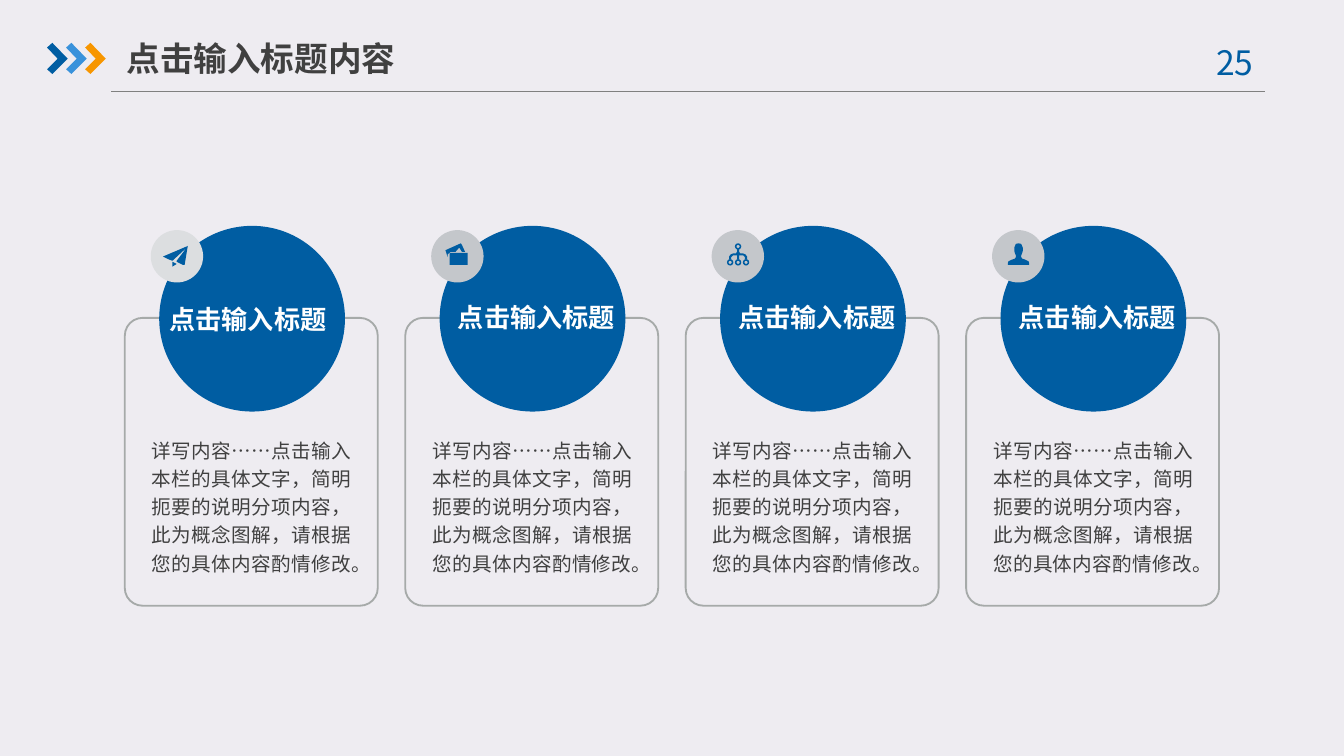
from lxml import etree
from pptx import Presentation
from pptx.dml.color import RGBColor
from pptx.enum.shapes import MSO_CONNECTOR, MSO_SHAPE
from pptx.enum.text import MSO_ANCHOR, PP_ALIGN
from pptx.oxml.ns import qn
from pptx.util import Cm, Pt

STRAIGHT = MSO_CONNECTOR.STRAIGHT
OVAL, DONUT = MSO_SHAPE.OVAL, MSO_SHAPE.DONUT
ROUNDED, RECT = MSO_SHAPE.ROUNDED_RECTANGLE, MSO_SHAPE.RECTANGLE
LEFT, CENTER, JUSTIFY = PP_ALIGN.LEFT, PP_ALIGN.CENTER, PP_ALIGN.JUSTIFY
TOP, MIDDLE = MSO_ANCHOR.TOP, MSO_ANCHOR.MIDDLE

FONT = "Noto Sans CJK SC"
BLUE, SKY, ORANGE = "005DA2", "3992DB", "F79600"
DARK, WHITE = "404040", "FFFFFF"
CARD_LEFT, CARD_PITCH = 2.36, 5.3
TITLE = "点击输入标题"
BODY = ("详写内容……点击输入本栏的具体文字，简明扼要的说明分项内容，"
        "此为概念图解，请根据您的具体内容酌情修改。")

CHEVRON = [(0, 9), (10, 0), (39, 30), (10, 59), (0, 50), (20, 30)]
PLANE_WINGS = [(70, 30), (23, 50), (33, 55), (41, 58), (68, 33), (49, 58),
               (49, 60), (61, 66), (64, 66)]
PLANE_FOLD = [(41, 60), (49, 64), (41, 69)]
BACK_PHOTO = [(64, 41), (58, 28), (56, 25), (27, 38), (31, 51), (31, 46),
              (37, 41), (46, 41), (53, 33), (58, 41)]
HALF_TREE = [(52, 36), (52, 41), (54, 44), (59, 44), (64, 46), (67, 50),
             (67, 56), (63, 56), (63, 51), (60, 48), (52, 48), (52, 56)]
HALF_PERSON = [(50, 25), (55, 26), (58, 33), (58, 39), (57, 43), (55, 48),
               (55, 51), (57, 54), (63, 56), (69, 59), (70, 62), (70, 66)]
TREE_NODES = [(0.5, 0.31), (0.35, 0.61), (0.5, 0.61), (0.65, 0.61)]


def color(value):
    """Return the colour for a hex string."""
    return RGBColor.from_string(value)


def paint(s, fill=None, line=None):
    """Set the fill and outline of a shape and drop its shadow."""
    s.shadow.inherit = False
    if fill:
        s.fill.solid()
        s.fill.fore_color.rgb = color(fill)
    else:
        s.fill.background()
    if line:
        s.line.color.rgb = color(line)
        s.line.width = Pt(1)
    else:
        s.line.fill.background()


def add_preset(slide, kind, x, y, w, h, fill=None, line=None, adjust=None):
    """Add a preset shape."""
    s = slide.shapes.add_shape(kind, Cm(x), Cm(y), Cm(w), Cm(h))
    if adjust is not None:
        s.adjustments[0] = adjust
    paint(s, fill, line)


def add_outline(slide, x, y, points, fill):
    """Add a closed polygon given in hundredths of a centimetre."""
    builder = slide.shapes.build_freeform(*points[0], scale=Cm(0.01))
    builder.add_line_segments(points[1:], close=True)
    paint(builder.convert_to_shape(Cm(x), Cm(y)), fill)


def mirrored(half):
    """Complete a right half outline with its reflection about x = 50."""
    return half + [(100 - x, y) for x, y in reversed(half)]


def add_text(slide, x, y, w, h, text, size, fill, align=LEFT, anchor=MIDDLE,
             bold=False, spacing=None, inset=0):
    """Add a wrapped text box with one paragraph."""
    tf = slide.shapes.add_textbox(Cm(x), Cm(y), Cm(w), Cm(h)).text_frame
    tf.word_wrap = True
    tf.vertical_anchor = anchor
    tf.margin_left = tf.margin_right = 0
    tf.margin_top = tf.margin_bottom = Cm(inset)
    p = tf.paragraphs[0]
    p.text = text
    p.alignment = align
    if spacing:
        p.line_spacing = spacing
    p.font.size = Pt(size)
    p.font.bold = bold
    p.font.name = FONT
    p.font.color.rgb = color(fill)
    props = p._p.pPr.find(qn("a:defRPr"))
    etree.SubElement(props, qn("a:ea"), typeface=FONT)


def add_rule(slide, x1, x2, y):
    """Add the grey horizontal rule under the heading."""
    s = slide.shapes.add_connector(STRAIGHT, Cm(x1), Cm(y), Cm(x2), Cm(y))
    s.line.color.rgb = color("808080")
    s.line.width = Pt(0.75)
    etree.SubElement(s._element.spPr, qn("a:effectLst"))


def add_header(slide):
    """Add the rule, chevrons, page number and heading."""
    add_rule(slide, 2.1, 23.9, 1.73)
    for i, fill in enumerate((BLUE, SKY, ORANGE)):
        add_outline(slide, 0.89 + 0.36 * i, 0.81, CHEVRON, fill)
    add_text(slide, 22.41, 0.66, 1.85, 1.02, "25", 18, BLUE, CENTER, TOP,
             inset=0.13)
    add_text(slide, 2.39, 0.56, 5.92, 1.07, "点击输入标题内容", 18, DARK,
             bold=True, inset=0.13)


def draw_plane(slide, x, y):
    """Draw a paper plane."""
    for points in (PLANE_WINGS, PLANE_FOLD):
        add_outline(slide, x, y, points, BLUE)


def draw_photos(slide, x, y):
    """Draw two stacked photos."""
    add_outline(slide, x, y, BACK_PHOTO, BLUE)
    add_preset(slide, RECT, x + 0.35, y + 0.43, 0.34, 0.23, BLUE)


def draw_tree(slide, x, y):
    """Draw a branching tree with ring nodes."""
    add_outline(slide, x, y, mirrored(HALF_TREE), BLUE)
    for dx, dy in TREE_NODES:
        add_preset(slide, DONUT, x + dx - 0.06, y + dy - 0.06, 0.12, 0.12,
                   BLUE, adjust=0.25)


def draw_person(slide, x, y):
    """Draw the bust of a person."""
    add_outline(slide, x, y, mirrored(HALF_PERSON), BLUE)


def add_card(slide, x, draw_icon, badge, title_shift, title_spacing):
    """Add a framed card with a title disc, an icon badge and body text."""
    add_preset(slide, ROUNDED, x, 6.01, 4.78, 5.44, line="A6AAA9",
               adjust=0.07)
    add_preset(slide, OVAL, x + 0.65, 4.27, 3.51, 3.51, BLUE)
    add_preset(slide, OVAL, x + 0.49, 4.35, 0.99, 0.99, badge)
    draw_icon(slide, x + 0.49, 4.35)
    add_text(slide, x + title_shift, 5.44, 3.3, 1.19, TITLE, 14, WHITE,
             CENTER, bold=True, spacing=title_spacing)
    add_text(slide, x + 0.51, 8.36, 3.78, 2.36, BODY, 10.5, DARK, JUSTIFY,
             spacing=1.2)


def main():
    """Build and save the slide."""
    prs = Presentation()
    prs.slide_width, prs.slide_height = Cm(25.4), Cm(14.29)
    slide = prs.slides.add_slide(prs.slide_layouts[6])
    slide.background.fill.solid()
    slide.background.fill.fore_color.rgb = color("EEECF1")
    add_header(slide)
    cards = [
        (draw_plane, "DCDEE0", 0.68, 1.0),
        (draw_photos, "C4C7CB", 0.83, 0.9),
        (draw_tree, "C4C7CB", 0.83, 0.9),
        (draw_person, "C4C7CB", 0.83, 0.9),
    ]
    for i, card in enumerate(cards):
        add_card(slide, CARD_LEFT + CARD_PITCH * i, *card)
    prs.save("out.pptx")


if __name__ == "__main__":
    main()
